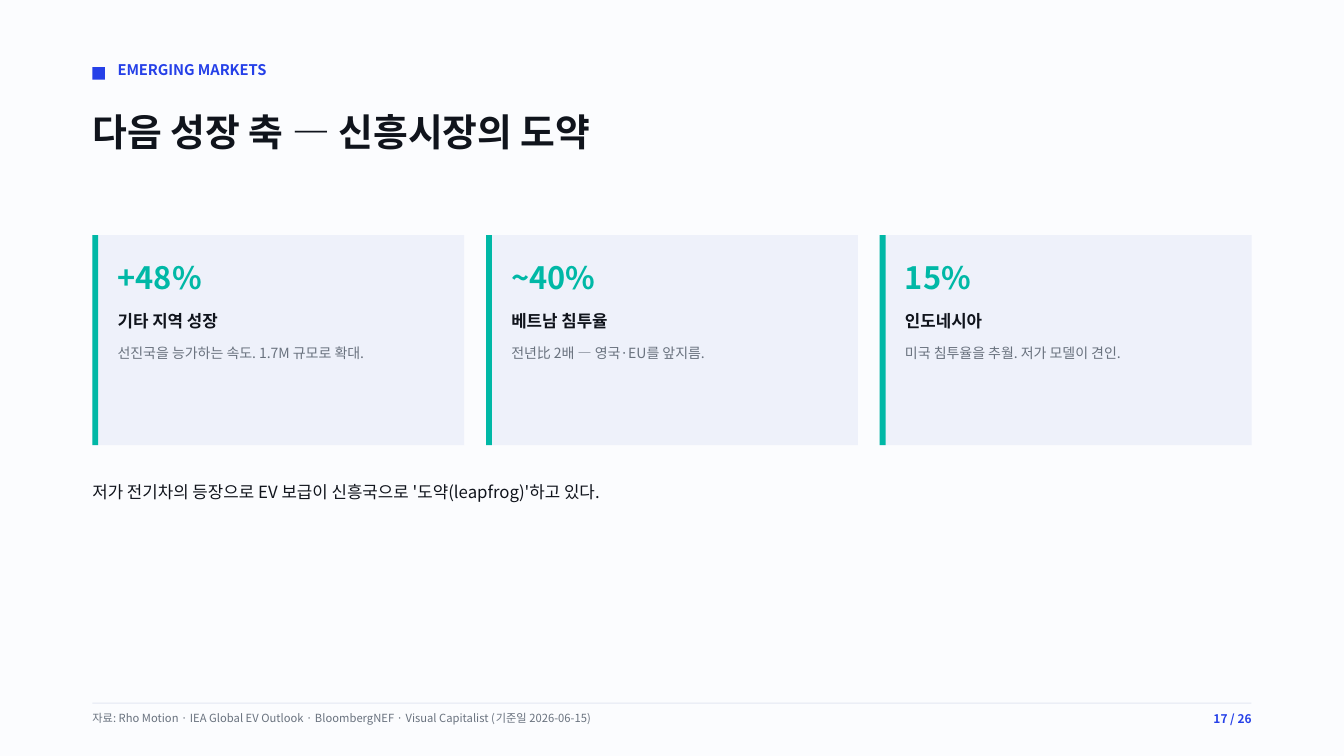
"""Build the emerging markets slide on a grid of 160 columns by 90 rows."""
from lxml.etree import SubElement
from pptx import Presentation
from pptx.dml.color import RGBColor
from pptx.enum.shapes import MSO_SHAPE
from pptx.enum.text import MSO_AUTO_SIZE, PP_ALIGN
from pptx.oxml.ns import qn
from pptx.util import Inches, Pt

FONT = "Noto Sans CJK KR"
PAPER = RGBColor(0xFB, 0xFC, 0xFE)
BLUE = RGBColor(0x25, 0x40, 0xE8)
INK = RGBColor(0x10, 0x14, 0x1C)
PANEL = RGBColor(0xEE, 0xF1, 0xFA)
TEAL = RGBColor(0x00, 0xB8, 0xA6)
GRAY = RGBColor(0x69, 0x72, 0x7E)
RULE = RGBColor(0xE3, 0xE8, 0xF2)

LEFT, WIDE = 11, 138
PAD, GAP = 3, 2.6
TOP, TALL = 28, 25
CARDS = [
    ("+48%", "기타 지역 성장", "선진국을 능가하는 속도. 1.7M 규모로 확대."),
    ("~40%", "베트남 침투율", "전년比 2배 — 영국·EU를 앞지름."),
    ("15%", "인도네시아", "미국 침투율을 추월. 저가 모델이 견인."),
]


def cell(count):
    """Turn grid cells into a length."""
    return Inches(count / 12)


def block(slide, left, top, wide, tall, fill):
    """Draw a plain filled rectangle."""
    shape = slide.shapes.add_shape(
        MSO_SHAPE.RECTANGLE, cell(left), cell(top), cell(wide), cell(tall))
    shape.shadow.inherit = False
    shape.fill.solid()
    shape.fill.fore_color.rgb = fill
    shape.line.fill.background()


def label(slide, left, top, wide, text, size, color, bold=False,
          align=None, wrap=True):
    """Write one line of text in a box without margins."""
    box = slide.shapes.add_textbox(
        cell(left), cell(top), cell(wide), Pt(size * 1.2))
    frame = box.text_frame
    frame.margin_left = frame.margin_right = 0
    frame.margin_top = frame.margin_bottom = 0
    frame.word_wrap = wrap
    frame.auto_size = MSO_AUTO_SIZE.SHAPE_TO_FIT_TEXT
    para = frame.paragraphs[0]
    para.alignment = align
    run = para.add_run()
    run.text = text
    font = run.font
    font.size, font.bold, font.name = Pt(size), bold, FONT
    font.color.rgb = color
    SubElement(run._r.get_or_add_rPr(), qn("a:ea")).set("typeface", FONT)


def card(slide, left, wide, value, name, note):
    """Draw a figure card with a teal edge."""
    block(slide, left, TOP, wide, TALL, PANEL)
    block(slide, left, TOP, 0.7, TALL, TEAL)
    inner, room = left + PAD, wide - 1.8 * PAD
    label(slide, inner, TOP + 2.75, room, value, 22, TEAL, True)
    label(slide, inner, TOP + 9, room, name, 12, INK, True)
    label(slide, inner, TOP + 13, room, note, 10, GRAY)


def header(slide):
    """Add the section mark and the title."""
    block(slide, LEFT, 8, 1.5, 1.5, BLUE)
    label(slide, LEFT + PAD, 7.2, 18.1, "EMERGING MARKETS", 10.5, BLUE, True,
          wrap=False)
    label(slide, LEFT, 13, WIDE, "다음 성장 축 — 신흥시장의 도약", 27, INK, True)


def footer(slide):
    """Add the rule, the sources and the page number."""
    block(slide, LEFT, 83.65, WIDE, 0.12, RULE)
    label(slide, LEFT, 84.7, WIDE - 10,
          "자료: Rho Motion · IEA Global EV Outlook · BloombergNEF · "
          "Visual Capitalist (기준일 2026-06-15)", 8, GRAY)
    label(slide, LEFT + WIDE - 10, 84.7, 10, "17 / 26", 8.5, BLUE, True,
          PP_ALIGN.RIGHT)


def main():
    """Build and save the slide."""
    deck = Presentation()
    deck.slide_width, deck.slide_height = cell(160), cell(90)
    slide = deck.slides.add_slide(deck.slide_layouts[6])
    slide.background.fill.solid()
    slide.background.fill.fore_color.rgb = PAPER
    header(slide)
    wide = (WIDE - GAP * (len(CARDS) - 1)) / len(CARDS)
    for spot, facts in enumerate(CARDS):
        card(slide, LEFT + spot * (wide + GAP), wide, *facts)
    label(slide, LEFT, 57.4, WIDE,
          "저가 전기차의 등장으로 EV 보급이 신흥국으로 '도약(leapfrog)'하고 있다.",
          12, INK)
    footer(slide)
    deck.save("out.pptx")


if __name__ == "__main__":
    main()
